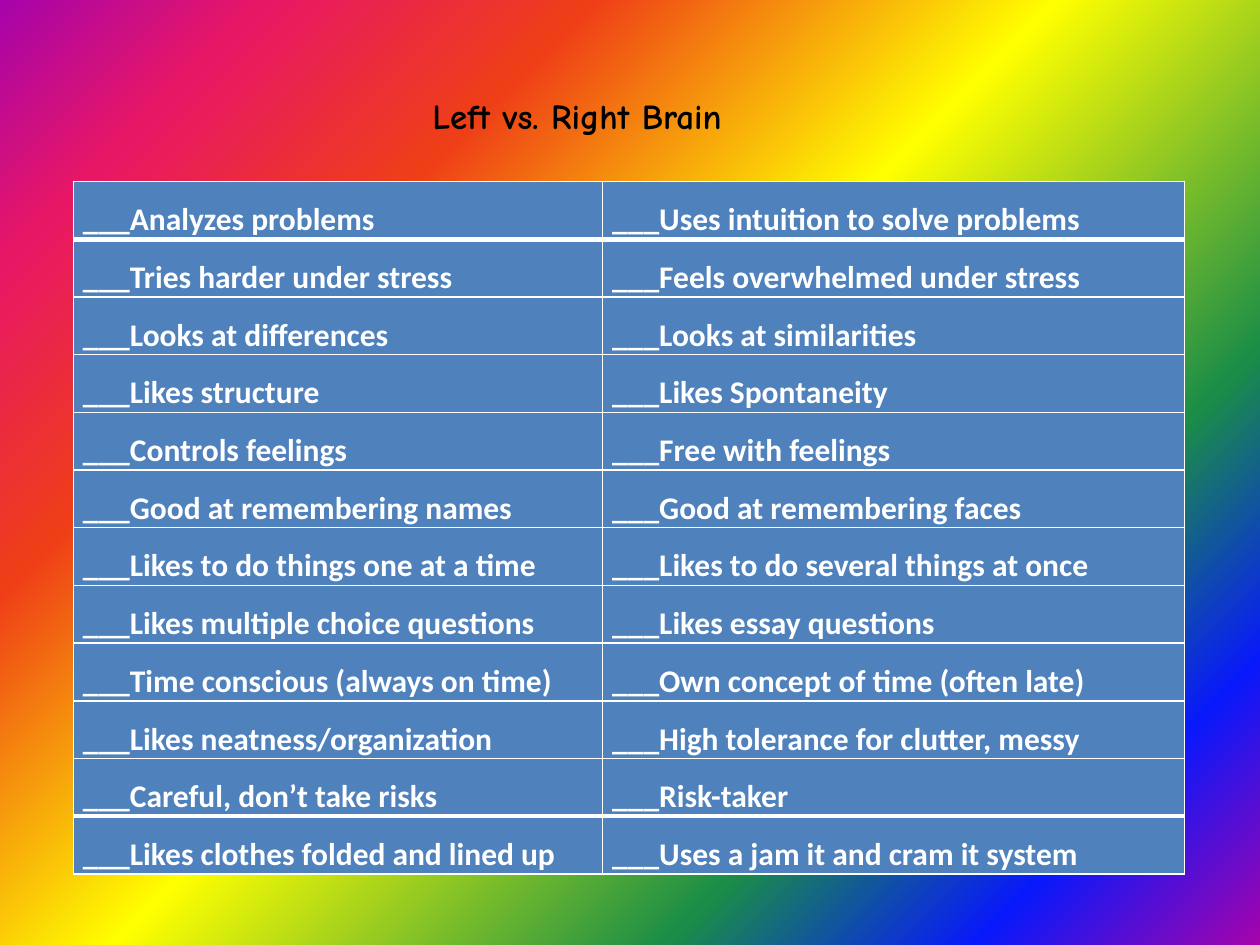
from lxml.etree import SubElement
from pptx import Presentation
from pptx.dml.color import RGBColor as RGB
from pptx.enum.text import MSO_ANCHOR as Anchor, MSO_AUTO_SIZE as AutoSize, PP_ALIGN as Align
from pptx.oxml.ns import qn
from pptx.util import Cm, Pt

COLORS = {"title": "000000", "text": "FFFFFF", "border": "FFFFFF", "cell": "4F81BD"}
RAINBOW = [(0, "A603AB"), (13, "0819FB"), (27, "1A8D48"), (52, "FFFF00"),
           (73, "EE3F17"), (88, "E81766"), (100, "A603AB")]

TITLE = "Left vs. Right Brain"
BLANK = "___"
TRAITS = [  # left brain, right brain
    ("Analyzes problems", "Uses intuition to solve problems"),
    ("Tries harder under stress", "Feels overwhelmed under stress"),
    ("Looks at differences", "Looks at similarities"),
    ("Likes structure", "Likes Spontaneity"),
    ("Controls feelings", "Free with feelings"),
    ("Good at remembering names", "Good at remembering faces"),
    ("Likes to do things one at a time", "Likes to do several things at once"),
    ("Likes multiple choice questions", "Likes essay questions"),
    ("Time conscious (always on time)", "Own concept of time (often late)"),
    ("Likes neatness/organization", "High tolerance for clutter, messy"),
    ("Careful, don’t take risks", "Risk-taker"),
    ("Likes clothes folded and lined up", "Uses a jam it and cram it system"),
]
COLUMN_WIDTHS = [Cm(10.67), Cm(11.73)]
ROW_HEIGHT = Cm(1.16)


def paint_rainbow(slide):
    slide.background.fill.gradient()
    gradient = slide.element.find(".//" + qn("a:gradFill"))
    for child in list(gradient):
        gradient.remove(child)
    stops = SubElement(gradient, qn("a:gsLst"))
    for position, color in RAINBOW:
        stop = SubElement(stops, qn("a:gs"), pos=str(position * 1000))
        SubElement(stop, qn("a:srgbClr"), val=color)
    path = SubElement(gradient, qn("a:path"), path="circle")
    SubElement(path, qn("a:fillToRect"), l="100000", t="100000")


def add_borders(cell, widths):
    properties = cell._tc.get_or_add_tcPr()
    for index, (side, width) in enumerate(widths.items()):
        line = SubElement(properties, qn("a:ln" + side), w=str(Pt(width)))
        fill = SubElement(line, qn("a:solidFill"))
        SubElement(fill, qn("a:srgbClr"), val=COLORS["border"])
        properties.insert(index, line)  # borders precede the cell fill


def style(paragraph, font_name, size, color):
    paragraph.alignment = Align.LEFT
    font = paragraph.font
    font.name, font.size, font.bold = font_name, Pt(size), True
    font.color.rgb = RGB.from_string(COLORS[color])


prs = Presentation()
prs.slide_width, prs.slide_height = Cm(25.4), Cm(19.05)
slide = prs.slides.add_slide(prs.slide_layouts[5])
paint_rainbow(slide)

# Title
title = slide.shapes.title
title.left, title.top, title.width, title.height = Cm(8.46), Cm(1.78), Cm(7.47), Cm(1.88)
heading = title.text_frame
heading.text = TITLE
heading.word_wrap = False
heading.auto_size = AutoSize.NONE
heading.vertical_anchor = Anchor.TOP
style(heading.paragraphs[0], "Comic Neue", 20, "title")

# Checklist of traits
last = len(TRAITS) - 1
checklist = slide.shapes.add_table(
    len(TRAITS), 2, Cm(1.48), Cm(3.66), sum(COLUMN_WIDTHS), ROW_HEIGHT * len(TRAITS)).table
for column, width in zip(checklist.columns, COLUMN_WIDTHS):
    column.width = width
for r, traits in enumerate(TRAITS):
    checklist.rows[r].height = ROW_HEIGHT
    # Heavy rules set off the first and last rows
    edges = {"L": 1, "R": 1,
             "T": 3 if r in (1, last) else 1,
             "B": 3 if r in (0, last - 1) else 1}
    for c, trait in enumerate(traits):
        cell = checklist.cell(r, c)
        cell.text = BLANK + trait
        cell.margin_left = cell.margin_right = Cm(0.19)
        cell.margin_top = cell.margin_bottom = 0
        cell.vertical_anchor = Anchor.MIDDLE
        cell.fill.solid()
        cell.fill.fore_color.rgb = RGB.from_string(COLORS["cell"])
        add_borders(cell, edges)
        paragraph = cell.text_frame.paragraphs[0]
        paragraph.line_spacing = 1.5
        style(paragraph, "Calibri", 18, "text")

prs.save("out.pptx")
